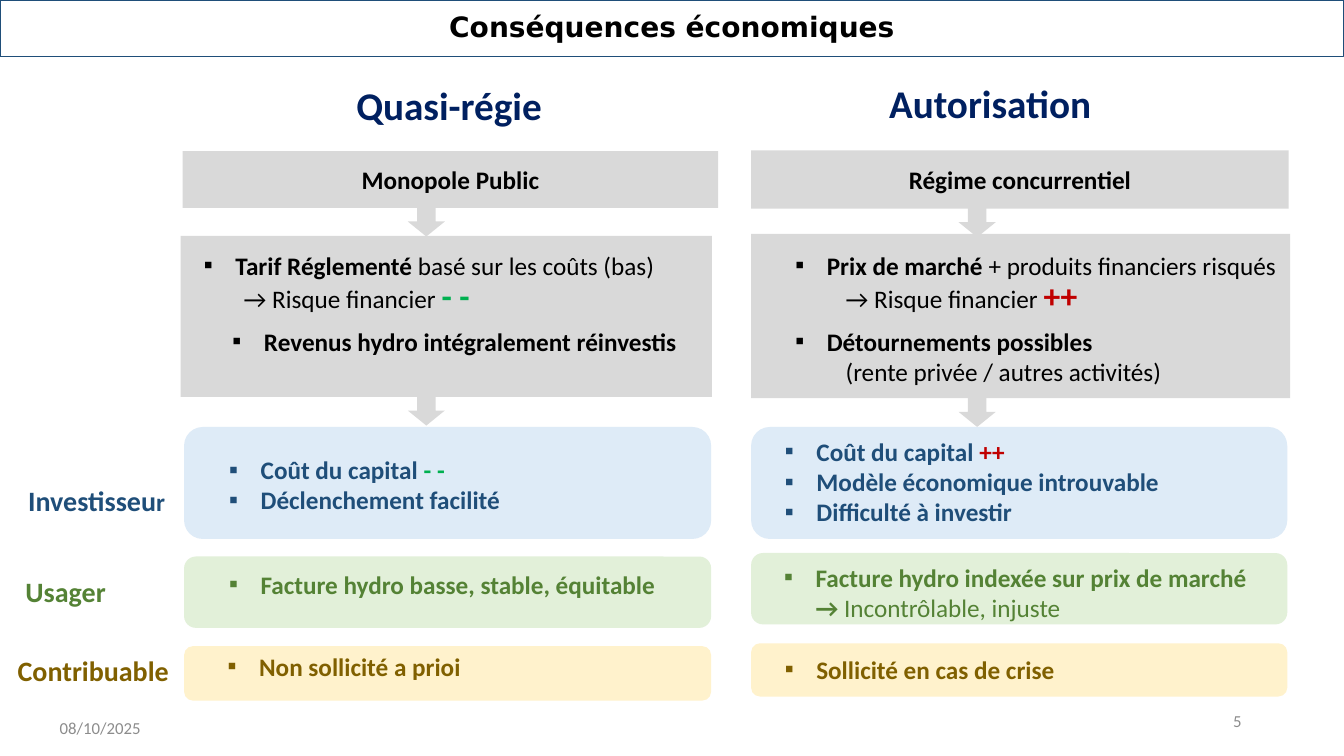
from typing import NamedTuple

from lxml.etree import SubElement
from pptx import Presentation
from pptx.dml.color import RGBColor
from pptx.enum.shapes import MSO_SHAPE
from pptx.enum.text import MSO_ANCHOR, MSO_AUTO_SIZE, PP_ALIGN
from pptx.oxml.ns import qn
from pptx.util import Pt

COLORS = {
    "black": "000000", "footer": "8C8C8C", "heading": "002060",
    "investor": "1F4E79", "investor_card": "DEEBF7",
    "user": "548235", "user_card": "E2F0D9",
    "taxpayer": "806000", "taxpayer_card": "FFF2CC",
    "regime": "D9D9D9", "good": "00B050", "bad": "C00000",
}
BULLET_INDENT = 22.5
SUB_INDENT = 36


class Run(NamedTuple):
    text: str
    color: str = "black"
    bold: bool = True
    size: float = 18
    font: str = "Calibri"


class Para(NamedTuple):
    runs: list
    bullet: bool = False
    align: PP_ALIGN = PP_ALIGN.LEFT
    indent: float = 0


def bullet(*runs, align=PP_ALIGN.LEFT):
    return Para(runs, True, align, BULLET_INDENT)


def sub_line(*runs):
    return Para(runs, indent=SUB_INDENT)


def centered(*runs):
    return Para(runs, align=PP_ALIGN.CENTER)


def rgb(name):
    return RGBColor.from_string(COLORS[name])


def place(part, left, top, width, height):
    part.left, part.top, part.width, part.height = map(Pt, (left, top, width, height))


def write(part, paras, anchor=MSO_ANCHOR.TOP, spacing=1.0):
    frame = part.text_frame
    frame.word_wrap = True
    frame.auto_size = MSO_AUTO_SIZE.NONE
    frame.vertical_anchor = anchor
    for i, para in enumerate(paras):
        line = frame.add_paragraph() if i else frame.paragraphs[0]
        line.alignment = para.align
        line.line_spacing = spacing
        line.space_before = line.space_after = Pt(0)
        props = line._p.get_or_add_pPr()
        props.set("marL", str(Pt(para.indent)))
        props.set("indent", str(Pt(-para.indent if para.bullet else 0)))
        if para.bullet:
            SubElement(props, qn("a:buFont"), typeface="Calibri")
            SubElement(props, qn("a:buChar"), char="▪")
        else:
            SubElement(props, qn("a:buNone"))
        for item in para.runs:
            for j, piece in enumerate(item.text.split("\n")):
                if j:
                    line.add_line_break()
                run = line.add_run()
                run.text = piece
                run.font.name = item.font
                run.font.size = Pt(item.size)
                run.font.bold = item.bold
                run.font.color.rgb = rgb(item.color)


def add_text(slide, box, paras, anchor=MSO_ANCHOR.TOP):
    write(slide.shapes.add_textbox(*map(Pt, box)), paras, anchor)


def add_block(slide, kind, box, color):
    block = slide.shapes.add_shape(kind, *map(Pt, box))
    block.shadow.inherit = False
    block.fill.solid()
    block.fill.fore_color.rgb = rgb(color)
    block.line.fill.background()
    return block


def fill_placeholder(slide, index, box, paras, anchor=MSO_ANCHOR.TOP, spacing=1.0):
    """Places a template placeholder in front of the parts drawn so far."""
    holder = slide.placeholders[index]
    place(holder, *box)
    write(holder, paras, anchor, spacing)
    slide.shapes.element.append(holder.element)
    return holder


def add_title(slide, box, text):
    title = Run(text, size=20, font="DejaVu Sans")
    banner = fill_placeholder(slide, 0, box, [centered(title)], MSO_ANCHOR.MIDDLE, 0.9)
    banner.line.color.rgb = rgb("investor")
    banner.line.width = Pt(0.75)


def add_heading(slide, index, box, text):
    heading = Run(text, "heading", size=28)
    fill_placeholder(slide, index, box, [centered(heading)], MSO_ANCHOR.MIDDLE)


def add_arrow_below(slide, box, center):
    left, top, width, height = box
    add_block(slide, MSO_SHAPE.DOWN_ARROW,
              (left + center - 13.25, top + height - 1, 26.5, 21.5), "regime")


def add_regime(slide, box, text, arrow_center):
    regime = add_block(slide, MSO_SHAPE.RECTANGLE, box, "regime")
    write(regime, [centered(Run(text))], MSO_ANCHOR.MIDDLE)
    add_arrow_below(slide, box, arrow_center)


def add_mechanism(slide, box, parts, arrow_center):
    """Each part is (x offset, y offset, width, height, paragraphs)."""
    add_block(slide, MSO_SHAPE.RECTANGLE, box, "regime")
    for dx, dy, width, height, paras in parts:
        add_text(slide, (box[0] + dx, box[1] + dy, width, height), paras)
    add_arrow_below(slide, box, arrow_center)


def add_card(slide, box, color, text_box, paras, index=None):
    """text_box is offset from the card; index picks a body placeholder."""
    add_block(slide, MSO_SHAPE.ROUNDED_RECTANGLE, box, color)
    dx, dy, width, height = text_box
    target = (box[0] + dx, box[1] + dy, width, height)
    if index:
        fill_placeholder(slide, index, target, paras)
    else:
        add_text(slide, target, paras)


def add_actor_label(slide, box, *runs):
    add_text(slide, box, [Para(runs)])


def add_footer(slide, date, number):
    for left, top, text, align in ((35.5, 505.5, date, PP_ALIGN.LEFT),
                                   (678, 500.5, number, PP_ALIGN.RIGHT)):
        note = Run(text, "footer", False, 12)
        add_text(slide, (left, top, 216, 29), [Para([note], align=align)], MSO_ANCHOR.MIDDLE)


def add_public_column(slide, left):
    add_heading(slide, 1, (left - 2, 54.5, 382.5, 40.5), "Quasi-régie")
    add_regime(slide, (left - 1, 108, 382.5, 40.5), "Monopole Public", 174)
    add_mechanism(slide, (left - 2.5, 168.5, 379.5, 115), [
        (3.5, 6.5, 348, 29, [bullet(Run("Tarif Réglementé "),
                                    Run("basé sur les coûts (bas)", bold=False),
                                    align=PP_ALIGN.CENTER)]),
        (2, 24.5, 309, 36, [sub_line(Run("→ Risque financier ", bold=False),
                                     Run("- -", "good", size=24))]),
        (30, 61, 365, 29, [bullet(Run("Revenus hydro intégralement réinvestis"))]),
    ], 175.5)
    add_card(slide, (left, 305, 376.5, 80), "investor_card", (25, 16, 409, 51), [
        bullet(Run("Coût du capital ", "investor"), Run("- -", "good")),
        bullet(Run("Déclenchement facilité", "investor")),
    ], index=2)
    add_card(slide, (left, 397.5, 376.5, 51), "user_card", (25, 5.5, 323, 29),
             [bullet(Run("Facture hydro basse, stable, équitable", "user"))])
    add_card(slide, (left, 461.5, 376.5, 39), "taxpayer_card", (24, 0, 325, 29),
             [bullet(Run("Non sollicité a prioi", "taxpayer"))])


def add_market_column(slide, left):
    add_heading(slide, 3, (left - 20.5, 53.5, 382.5, 40.5), "Autorisation")
    add_regime(slide, (left, 107.5, 384, 41.5), "Régime concurrentiel", 161.5)
    add_mechanism(slide, (left, 167, 385, 117.5), [
        (24.5, 8, 381, 48, [bullet(Run("Prix de marché "),
                                   Run("+ produits financiers risqués", bold=False))]),
        (24.5, 26, 286.5, 36, [sub_line(Run("→ Risque financier ", bold=False),
                                        Run("++", "bad", size=24))]),
        (24.5, 62.5, 393, 51, [bullet(Run("Détournements possibles")),
                               sub_line(Run("(rente privée / autres activités)", bold=False))]),
    ], 161.5)
    add_card(slide, (left, 305, 383, 80), "investor_card", (17, 3, 333, 73), [
        bullet(Run("Coût du capital ", "investor"), Run("++", "bad")),
        bullet(Run("Modèle économique introuvable", "investor")),
        bullet(Run("Difficulté à investir", "investor")),
    ], index=4)
    add_card(slide, (left, 395, 383, 51), "user_card", (16.5, 3, 405, 51),
             [bullet(Run("Facture hydro indexée sur prix de marché \n→ ", "user"),
                     Run("Incontrôlable, injuste", "user", False))])
    add_card(slide, (left, 459.5, 383, 38), "taxpayer_card", (17, 4, 262, 29),
             [bullet(Run("Sollicité en cas de crise", "taxpayer"))])


def main():
    deck = Presentation()
    deck.slide_width, deck.slide_height = Pt(960), Pt(540)
    comparison = deck.slide_layouts[4]
    slide = deck.slides.add_slide(comparison)
    add_footer(slide, "08/10/2025", "5")
    add_public_column(slide, 131.5)
    add_market_column(slide, 536.5)
    add_actor_label(slide, (13, 342, 117, 31.5),
                    Run("Investisseu", "investor", size=20), Run("r", "investor"))
    add_actor_label(slide, (11, 407, 112, 31.5), Run("Usager", "user", size=20))
    add_actor_label(slide, (5.5, 463.5, 126, 31.5), Run("Contribuable", "taxpayer", size=20))
    add_title(slide, (0, 0, 960, 40.5), "Conséquences économiques")
    deck.save("out.pptx")


if __name__ == "__main__":
    main()
